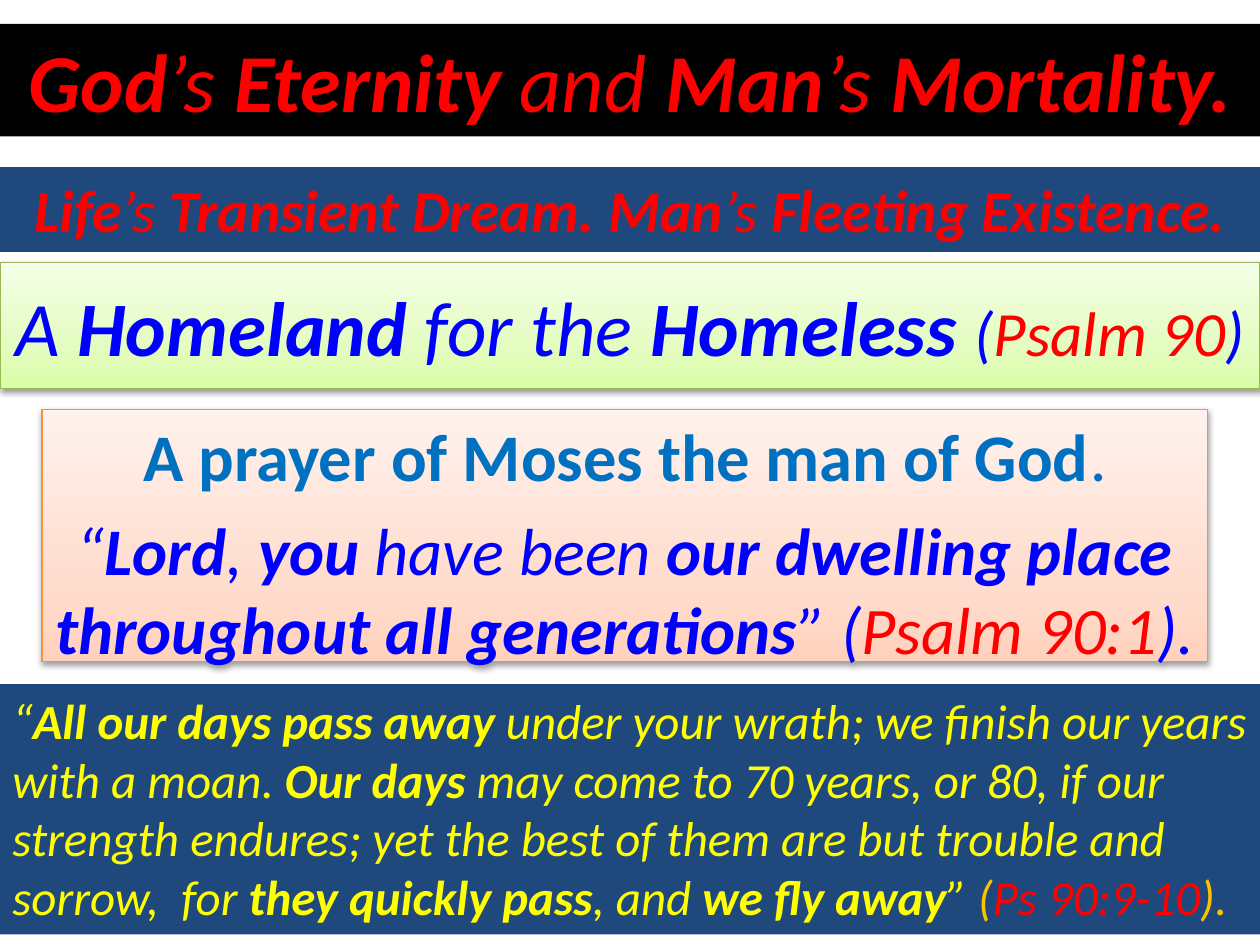
import pptx
import pptx.dml.color
import pptx.enum.shapes
import pptx.enum.text
import pptx.oxml
import pptx.oxml.ns
import pptx.util
from pptx.util import Cm, Pt

COLOURS = {
    "red": "FF0000", "blue": "0000FF", "sky": "0070C0", "yellow": "FFFF00",
    "amber": "FFC000", "black": "000000", "navy": "1F497D",
    "green edge": "98B955", "orange edge": "F69240",
}
# Stops run from the bottom of the panel to its top.
GRADIENTS = {
    "green": {0: "DAFDA7", 35: "E4FCC2", 100: "F5FFE7"},
    "peach": {0: "FFD2BD", 35: "FFDED0", 100: "FFF2ED"},
}
ALIGN = pptx.enum.text.PP_ALIGN
ANCHOR = pptx.enum.text.MSO_ANCHOR
FIT = pptx.enum.text.MSO_AUTO_SIZE
NS = pptx.oxml.ns.nsdecls("a")


def rgb(name):
    return pptx.dml.color.RGBColor.from_string(COLOURS[name])


def shade_panel(panel, stops):
    """Give the panel an upward gradient and a soft shadow below it."""
    stop_xml = "".join(
        f'<a:gs pos="{place * 1000}"><a:srgbClr val="{colour}"/></a:gs>'
        for place, colour in stops.items())
    outline = panel.line._get_or_add_ln()
    outline.addprevious(pptx.oxml.parse_xml(
        f'<a:gradFill {NS} rotWithShape="1"><a:gsLst>{stop_xml}</a:gsLst>'
        '<a:lin ang="16200000" scaled="0"/></a:gradFill>'))
    outline.addnext(pptx.oxml.parse_xml(
        f'<a:effectLst {NS}><a:outerShdw blurRad="40000" dist="20000" dir="5400000" '
        'rotWithShape="0"><a:srgbClr val="000000"><a:alpha val="38000"/></a:srgbClr>'
        '</a:outerShdw></a:effectLst>'))


# Each paragraph is a list of (text, colour, size, italic); *stars* enclose bold words.
homeland = [[
    ("A *Homeland* for the *Homeless *", "blue", 44, True),
    ("(", "blue", 36, True), ("Psalm 90", "red", 36, True), (")", "blue", 36, True),
]]
prayer = [
    [("*A prayer of Moses the man of God*.", "sky", 38, False)],
    [("“*Lord*, *you* have been *our dwelling place throughout all generations*” (",
      "blue", 38, True),
     ("Psalm 90:1", "red", 38, True), (").", "blue", 38, True)],
]
subtitle = [[("*Life*’s* Transient Dream. Man*’s* Fleeting Existence.*", "red", 34, True)]]
passing_days = [[
    ("“*All our days pass away *under your wrath; we finish our years with a moan. "
     "*Our days *may come to 70 years, or 80, if our strength endures; yet the best "
     "of them are but trouble and sorrow,  for *they quickly pass*, and *we fly away*” ",
     "yellow", 28, True),
    ("(", "amber", 28, True), ("Ps 90:9-10", "red", 28, True), (").", "amber", 28, True),
]]
title = [[("*God*’s* Eternity *and* Man*’s *Mortality.*", "red", 47, True)]]

# left, top, width, height in cm; fill; edge; space before; frame format; alignment; text
bar = {"vertical_anchor": ANCHOR.TOP, "auto_size": FIT.SHAPE_TO_FIT_TEXT}
middle = {"vertical_anchor": ANCHOR.MIDDLE, "auto_size": FIT.NONE}
top = {"vertical_anchor": ANCHOR.TOP, "auto_size": FIT.NONE}
bands = [
    ((0, 5.29, 25.4, 2.54), "green", "green edge", 0, middle, ALIGN.CENTER, homeland),
    ((0.85, 8.25, 23.5, 5.08), "peach", "orange edge", 7.6, top, ALIGN.CENTER, prayer),
    ((0, 3.37, 25.4, 1.71), "navy", None, 0, bar, ALIGN.CENTER, subtitle),
    ((0, 13.79, 25.4, 5.05), "navy", None, 0, bar, ALIGN.LEFT, passing_days),
    ((0, 0.48, 25.4, 2.27), "black", None, 0, bar, ALIGN.CENTER, title),
]

deck = pptx.Presentation()
deck.slide_width, deck.slide_height = Cm(25.4), Cm(19.05)
slide = deck.slides.add_slide(deck.slide_layouts[6])

for box, fill, edge, space, frame_format, alignment, paragraphs in bands:
    band = slide.shapes.add_shape(
        pptx.enum.shapes.MSO_SHAPE.RECTANGLE, *(Cm(length) for length in box))
    if fill in GRADIENTS:
        band.line.color.rgb = rgb(edge)
        band.line.width = Pt(0.75)
        shade_panel(band, GRADIENTS[fill])
    else:
        band.shadow.inherit = False
        band.fill.solid()
        band.fill.fore_color.rgb = rgb(fill)
        band.line.fill.background()

    frame = band.text_frame
    frame.word_wrap = True
    for attribute, value in frame_format.items():
        setattr(frame, attribute, value)

    for index, pieces in enumerate(paragraphs):
        paragraph = frame.add_paragraph() if index else frame.paragraphs[0]
        paragraph.alignment = alignment
        paragraph.space_before = Pt(space)
        for marked, colour, size, italic in pieces:
            for position, words in enumerate(marked.split("*")):
                if not words:
                    continue
                run = paragraph.add_run()
                run.text = words
                run.font.color.rgb = rgb(colour)
                font_format = {"name": "Calibri", "size": Pt(size),
                               "bold": position % 2 == 1, "italic": italic}
                for attribute, value in font_format.items():
                    setattr(run.font, attribute, value)

deck.save("out.pptx")
